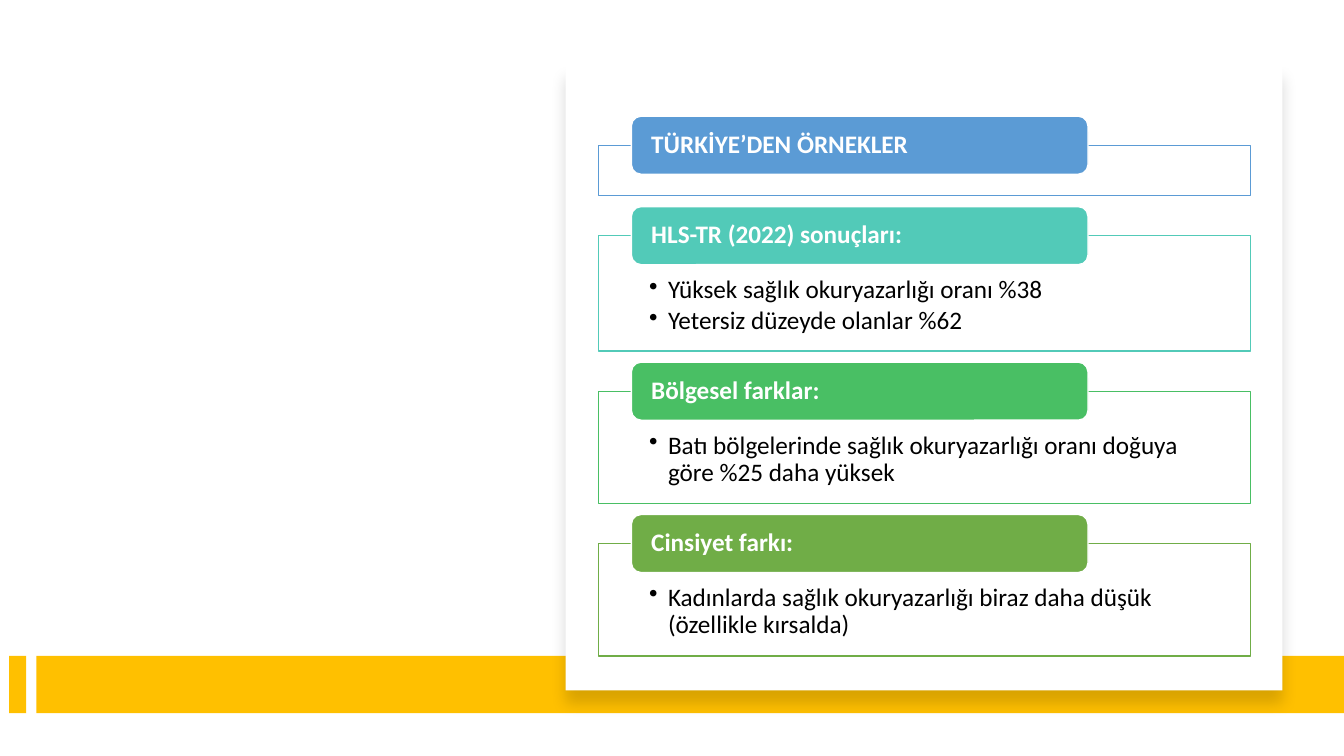
"""Build the slide with example health literacy findings from Türkiye."""
from dataclasses import dataclass

from lxml.etree import SubElement
from pptx import Presentation
from pptx.dml.color import RGBColor
from pptx.enum.shapes import MSO_SHAPE
from pptx.enum.text import MSO_ANCHOR, PP_ALIGN
from pptx.oxml.ns import qn
from pptx.shapes.autoshape import Shape
from pptx.slide import Slide
from pptx.text.text import _Paragraph
from pptx.util import Pt

WHITE = RGBColor(0xFF, 0xFF, 0xFF)
BLACK = RGBColor(0x00, 0x00, 0x00)
GOLD = RGBColor(0xFF, 0xC0, 0x00)
BLUE = RGBColor(0x5B, 0x9B, 0xD5)
TEAL = RGBColor(0x52, 0xCA, 0xB8)
EMERALD = RGBColor(0x49, 0xBF, 0x64)
GREEN = RGBColor(0x70, 0xAD, 0x47)

FONT_NAME = "Calibri"
FONT_SIZE = 18
FRAME_LEFT, FRAME_WIDTH = 427.7, 465.8
FIRST_FRAME_TOP, FRAME_GAP = 103.8, 28.6
HEADING_LEFT, HEADING_WIDTH, HEADING_HEIGHT = 451, 326.2, 41.5
HEADING_RISE = 20.8
BULLET_INDENT = 13.5


@dataclass(frozen=True)
class Box:
    left: float
    top: float
    width: float
    height: float


@dataclass(frozen=True)
class Section:
    heading: str
    bullets: tuple[str, ...]
    height: float
    color: RGBColor


GOLD_BARS = (Box(6.5, 468.5, 12.2, 41), Box(25.9, 468.5, 934.1, 41))
CARD = Box(404.1, 46.1, 511.9, 447.1)
SECTIONS = (
    Section("TÜRKİYE’DEN ÖRNEKLER", (), 36, BLUE),
    Section(
        "HLS-TR (2022) sonuçları:",
        ("Yüksek sağlık okuryazarlığı oranı %38", "Yetersiz düzeyde olanlar %62"),
        82.5,
        TEAL,
    ),
    Section(
        "Bölgesel farklar:",
        ("Batı bölgelerinde sağlık okuryazarlığı oranı doğuya göre %25 daha yüksek",),
        80.2,
        EMERALD,
    ),
    Section(
        "Cinsiyet farkı:",
        ("Kadınlarda sağlık okuryazarlığı biraz daha düşük (özellikle kırsalda)",),
        80.2,
        GREEN,
    ),
)


def add_box(
    slide: Slide,
    box: Box,
    fill: RGBColor,
    line: RGBColor | None = None,
    kind: MSO_SHAPE = MSO_SHAPE.RECTANGLE,
) -> Shape:
    shape = slide.shapes.add_shape(
        kind, Pt(box.left), Pt(box.top), Pt(box.width), Pt(box.height)
    )
    shape.shadow.inherit = False
    shape.fill.solid()
    shape.fill.fore_color.rgb = fill
    if line is None:
        shape.line.fill.background()
    else:
        shape.line.color.rgb = line
        shape.line.width = Pt(1)
    return shape


def add_card(slide: Slide) -> None:
    card = add_box(slide, CARD, WHITE)
    effects = card._element.spPr.find(qn("a:effectLst"))
    shadow = SubElement(
        effects,
        qn("a:outerShdw"),
        blurRad=str(Pt(11)),
        dist=str(Pt(10)),
        dir="5400000",
        algn="t",
        rotWithShape="0",
    )
    color = SubElement(shadow, qn("a:srgbClr"), val=str(BLACK))
    SubElement(color, qn("a:alpha"), val="15000")


def set_insets(shape: Shape, side: float, top: float, bottom: float) -> None:
    frame = shape.text_frame
    frame.word_wrap = True
    frame.margin_left = frame.margin_right = Pt(side)
    frame.margin_top, frame.margin_bottom = Pt(top), Pt(bottom)


def write_text(paragraph: _Paragraph, text: str, color: RGBColor, bold: bool) -> None:
    paragraph.alignment = PP_ALIGN.LEFT
    paragraph.line_spacing = 0.9
    run = paragraph.add_run()
    run.text = text
    run.font.name = FONT_NAME
    run.font.size = Pt(FONT_SIZE)
    run.font.bold = bold
    run.font.color.rgb = color


def add_bullet(paragraph: _Paragraph) -> None:
    properties = paragraph._p.get_or_add_pPr()
    properties.set("marL", str(Pt(BULLET_INDENT)))
    properties.set("indent", str(-Pt(BULLET_INDENT)))
    SubElement(properties, qn("a:buChar"), char="•")
    paragraph.space_after = Pt(FONT_SIZE * 0.15)


def add_frame(slide: Slide, section: Section, top: float) -> None:
    box = Box(FRAME_LEFT, top, FRAME_WIDTH, section.height)
    shape = add_box(slide, box, WHITE, section.color)
    fill_color = shape._element.spPr.find(qn("a:solidFill"))[0]
    SubElement(fill_color, qn("a:alpha"), val="90000")
    set_insets(shape, 36, 29.5, 10)
    frame = shape.text_frame
    frame.vertical_anchor = MSO_ANCHOR.TOP
    for index, text in enumerate(section.bullets):
        paragraph = frame.add_paragraph() if index else frame.paragraphs[0]
        add_bullet(paragraph)
        write_text(paragraph, text, BLACK, False)


def add_heading(slide: Slide, section: Section, frame_top: float) -> None:
    box = Box(HEADING_LEFT, frame_top - HEADING_RISE, HEADING_WIDTH, HEADING_HEIGHT)
    shape = add_box(slide, box, section.color, WHITE, MSO_SHAPE.ROUNDED_RECTANGLE)
    set_insets(shape, 12.2, 0, 0)
    shape.text_frame.vertical_anchor = MSO_ANCHOR.MIDDLE
    write_text(shape.text_frame.paragraphs[0], section.heading, WHITE, True)


def main() -> None:
    presentation = Presentation()
    presentation.slide_width, presentation.slide_height = Pt(960), Pt(540)
    slide = presentation.slides.add_slide(presentation.slide_layouts[6])
    for bar in GOLD_BARS:
        add_box(slide, bar, GOLD)
    add_card(slide)
    top = FIRST_FRAME_TOP
    for section in SECTIONS:
        add_frame(slide, section, top)
        add_heading(slide, section, top)
        top += section.height + FRAME_GAP
    presentation.save("out.pptx")


if __name__ == "__main__":
    main()
